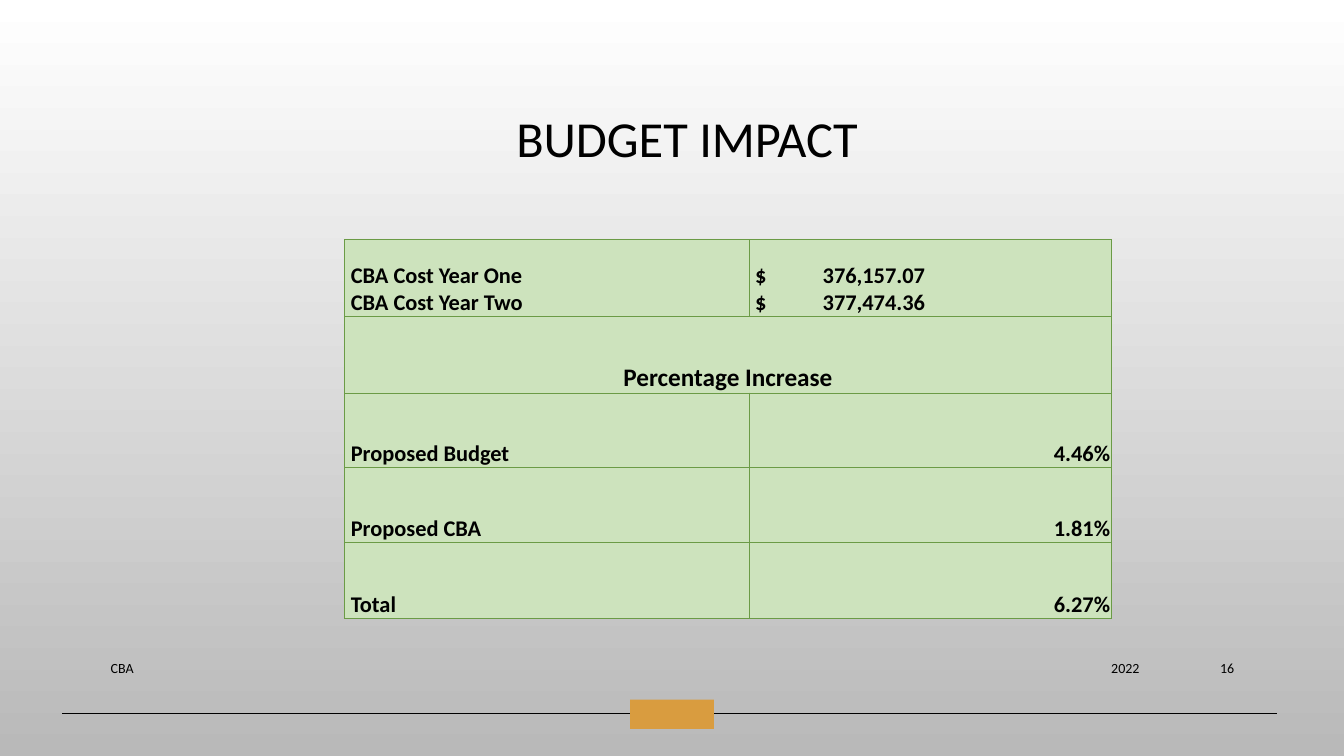
from pptx import Presentation
from pptx.dml.color import RGBColor
from pptx.enum.shapes import MSO_CONNECTOR as Line, MSO_SHAPE as Shape
from pptx.enum.text import MSO_ANCHOR as Anchor, PP_ALIGN as Align
from pptx.oxml.ns import qn
from pptx.util import Inches, Pt
from lxml.etree import SubElement

LEFT, MID, RIGHT = Align.LEFT, Align.CENTER, Align.RIGHT


def color(code):
    return RGBColor.from_string(code)


class Page:
    font = "Calibri"
    ink = "000000"
    gold = "D99C3F"
    cell_fill = "CDE3BD"
    border = "6B9B46"
    pad = 0.06
    tab = 0.67

    def __init__(self, deck):
        self.slide = deck.slides.add_slide(deck.slide_layouts[6])
        self.shapes = self.slide.shapes

    def backdrop(self, top, bottom):
        fill = self.slide.background.fill
        fill.gradient()
        fill.gradient_angle = 270
        for stop, code, place in zip(fill.gradient_stops, (top, bottom), (0, 1)):
            stop.color.rgb = color(code)
            stop.position = place

    def rule(self, x1, x2, y):
        line = self.shapes.add_connector(
            Line.STRAIGHT, Inches(x1), Inches(y), Inches(x2), Inches(y))
        line.line.color.rgb = color(self.ink)
        line.line.width = Pt(1)
        SubElement(line._element.spPr, qn("a:effectLst"))

    def block(self, *box):
        rect = self.shapes.add_shape(Shape.RECTANGLE, *map(Inches, box))
        rect.shadow.inherit = False
        rect.fill.solid()
        rect.fill.fore_color.rgb = color(self.gold)
        rect.line.fill.background()

    def label(self, frame, text, size, align, bold=False):
        frame.text = text
        for para in frame.paragraphs:
            para.alignment = align
            if "\t" in para.text:
                tabs = SubElement(para._p.get_or_add_pPr(), qn("a:tabLst"))
                SubElement(tabs, qn("a:tab"), pos=str(Inches(self.tab)), algn="l")
            font = para.font
            font.name, font.size, font.bold = self.font, Pt(size), bold
            font.color.rgb = color(self.ink)

    def text(self, text, box, size, align):
        frame = self.shapes.add_textbox(*map(Inches, box)).text_frame
        frame.word_wrap = True
        frame.vertical_anchor = Anchor.MIDDLE
        self.label(frame, text, size, align)

    def style(self, cell):
        cell.vertical_anchor = Anchor.BOTTOM
        cell.margin_left = Inches(self.pad)
        cell.margin_right = cell.margin_top = Inches(0.01)
        cell.margin_bottom = 0
        props = cell._tc.get_or_add_tcPr()
        for side in "LRTB":
            edge = SubElement(props, qn(f"a:ln{side}"), w=str(Pt(0.75)))
            fill = SubElement(edge, qn("a:solidFill"))
            SubElement(fill, qn("a:srgbClr"), val=self.border)
        cell.fill.solid()
        cell.fill.fore_color.rgb = color(self.cell_fill)

    def table(self, rows, box, widths, heights):
        grid = self.shapes.add_table(
            len(rows), len(widths), *map(Inches, box)).table
        for col, width in zip(grid.columns, widths):
            col.width = Inches(width)
        for r, (row, height) in enumerate(zip(rows, heights)):
            grid.rows[r].height = Inches(height)
            for c in range(len(widths)):
                self.style(grid.cell(r, c))
            if len(row) == 1:
                head = grid.cell(r, 0)
                head.merge(grid.cell(r, len(widths) - 1))
                head.margin_left = head.margin_right
                self.label(head.text_frame, row[0], 18, MID, True)
                continue
            for c, text in enumerate(row):
                align = RIGHT if text.endswith("%") else LEFT
                self.label(grid.cell(r, c).text_frame, text, 16, align, True)


def main():
    deck = Presentation()
    deck.slide_width, deck.slide_height = Inches(13.33), Inches(7.5)
    page = Page(deck)

    # Background and footer band
    page.backdrop("FFFFFF", "B9B9B9")
    page.rule(0.62, 12.67, 7.08)
    page.block(6.25, 6.94, 0.83, 0.29)

    # Title
    page.text("BUDGET IMPACT", (1.94, 0.66, 9.75, 1.4), 36, MID)

    # Footer
    for text, x, width, align in (
            ("2022", 8.4, 3, RIGHT), ("CBA", 1, 7.3, LEFT), ("16", 11.5, 0.84, RIGHT)):
        page.text(text, (x, 6.43, width, 0.4), 10, align)

    # Budget table
    rows = [
        ("CBA Cost Year One\nCBA Cost Year Two", "$\t376,157.07\n$\t377,474.36"),
        ("Percentage Increase",),
        ("Proposed Budget", "4.46%"),
        ("Proposed CBA", "1.81%"),
        ("Total", "6.27%"),
    ]
    page.table(rows, (3.42, 2.38, 7.6, 3.76), (4.01, 3.59),
               (0.76, 0.76, 0.74, 0.74, 0.76))

    deck.save("out.pptx")


if __name__ == "__main__":
    main()
